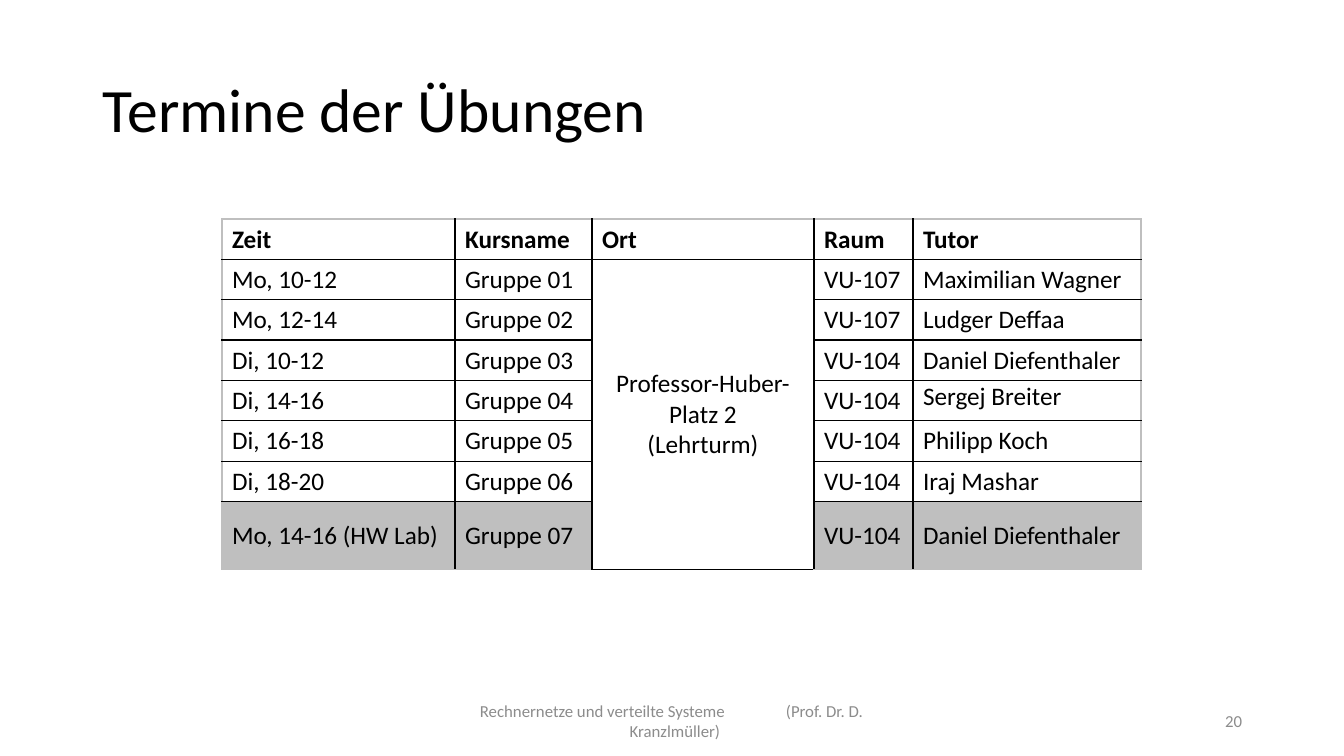
from dataclasses import dataclass

from lxml.etree import SubElement
from pptx import Presentation
from pptx.dml.color import RGBColor
from pptx.enum.text import MSO_ANCHOR, PP_ALIGN
from pptx.oxml.ns import qn
from pptx.util import Pt

PX = 914400 / 100.8


@dataclass(frozen=True)
class Theme:
    font: str = "Calibri"
    ink: str = "000000"
    muted: str = "8C8C8C"
    shade: str = "BFBFBF"
    title_size: int = 44
    table_size: int = 18
    footer_size: int = 12


theme = Theme()


def px(length):
    return round(length * PX)


def add_text(paragraph, text, size, color, bold=False):
    run = paragraph.add_run()
    run.text = text
    run.font.name = theme.font
    run.font.size = Pt(size)
    run.font.bold = bold
    run.font.color.rgb = RGBColor.from_string(color)


presentation = Presentation()
presentation.slide_width, presentation.slide_height = px(1344), px(756)
slide = presentation.slides.add_slide(presentation.slide_layouts[6])

# Title
title = slide.shapes.add_textbox(px(93), px(40), px(1159), px(146)).text_frame
title.word_wrap = True
title.vertical_anchor = MSO_ANCHOR.MIDDLE
title.paragraphs[0].line_spacing = 0.9
add_text(title.paragraphs[0], "Termine der Übungen", theme.title_size, theme.ink)

# Timetable
PLACE = ["Professor-Huber-Platz 2", "(Lehrturm)"]
sessions = [
    ("Mo, 10-12", "VU-107", "Maximilian Wagner"),
    ("Mo, 12-14", "VU-107", "Ludger Deffaa"),
    ("Di, 10-12", "VU-104", "Daniel Diefenthaler"),
    ("Di, 14-16", "VU-104", "Sergej Breiter"),
    ("Di, 16-18", "VU-104", "Philipp Koch"),
    ("Di, 18-20", "VU-104", "Iraj Mashar"),
    ("Mo, 14-16 (HW Lab)", "VU-104", "Daniel Diefenthaler"),
]
rows = [("Zeit", "Kursname", "Ort", "Raum", "Tutor")]
for number, (time, room, tutor) in enumerate(sessions, start=1):
    rows.append((time, f"Gruppe {number:02}", None, room, tutor))

column_widths = [233, 137, 222, 99, 228]
row_heights = [39] * len(sessions) + [68]
last_row, last_column = len(rows) - 1, len(column_widths) - 1
PLACE_COLUMN = 2

timetable = slide.shapes.add_table(
    len(rows), len(column_widths), px(222), px(219),
    px(sum(column_widths)), px(sum(row_heights))).table
timetable.first_row = False
timetable.horz_banding = False
for column, width in zip(timetable.columns, column_widths):
    column.width = px(width)
for row, height in zip(timetable.rows, row_heights):
    row.height = px(height)
timetable.cell(1, PLACE_COLUMN).merge(timetable.cell(last_row, PLACE_COLUMN))

for r, row in enumerate(rows):
    for c, text in enumerate(row):
        cell = timetable.cell(r, c)
        outer_edges = {"L": c == 0, "R": c == last_column,
                       "T": r == 0, "B": r == last_row}
        properties = cell._tc.get_or_add_tcPr()
        for side, is_outer in outer_edges.items():
            line = SubElement(properties, qn(f"a:ln{side}"), w=str(Pt(1)))
            fill = SubElement(line, qn("a:solidFill"))
            SubElement(fill, qn("a:srgbClr"), val=theme.shade if is_outer else theme.ink)
        if r == last_row and c != PLACE_COLUMN:
            cell.fill.solid()
            cell.fill.fore_color.rgb = RGBColor.from_string(theme.shade)
        else:
            cell.fill.background()
        if r == last_row:
            cell.vertical_anchor = MSO_ANCHOR.MIDDLE
        if text:
            add_text(cell.text_frame.paragraphs[0], text, theme.table_size,
                     theme.ink, bold=r == 0)
        if text == "Sergej Breiter":
            cell.margin_top = cell.margin_bottom = px(1)

place = timetable.cell(1, PLACE_COLUMN)
place.vertical_anchor = MSO_ANCHOR.MIDDLE
place.text_frame.add_paragraph()
for paragraph, text in zip(place.text_frame.paragraphs, PLACE):
    paragraph.alignment = PP_ALIGN.CENTER
    add_text(paragraph, text, theme.table_size, theme.ink)

# Footer
page = slide.shapes.add_textbox(px(950), px(701), px(302), px(40)).text_frame
page.word_wrap = True
page.vertical_anchor = MSO_ANCHOR.MIDDLE
page.paragraphs[0].alignment = PP_ALIGN.RIGHT
add_text(page.paragraphs[0], "20", theme.footer_size, theme.muted)

course = slide.shapes.add_textbox(px(446), px(701), px(454), px(40)).text_frame
course.word_wrap = True
course.vertical_anchor = MSO_ANCHOR.MIDDLE
course.margin_left, course.margin_right = px(34), px(30)
course_line = course.paragraphs[0]
tabs = SubElement(course_line._p.get_or_add_pPr(), qn("a:tabLst"))
SubElement(tabs, qn("a:tab"), pos=str(px(306)), algn="l")
add_text(course_line, "Rechnernetze und verteilte Systeme\t(Prof. Dr. D.",
         theme.footer_size, theme.muted)
lecturer_line = course.add_paragraph()
lecturer_line.alignment = PP_ALIGN.CENTER
add_text(lecturer_line, "Kranzlmüller)", theme.footer_size, theme.muted)

presentation.save("out.pptx")
